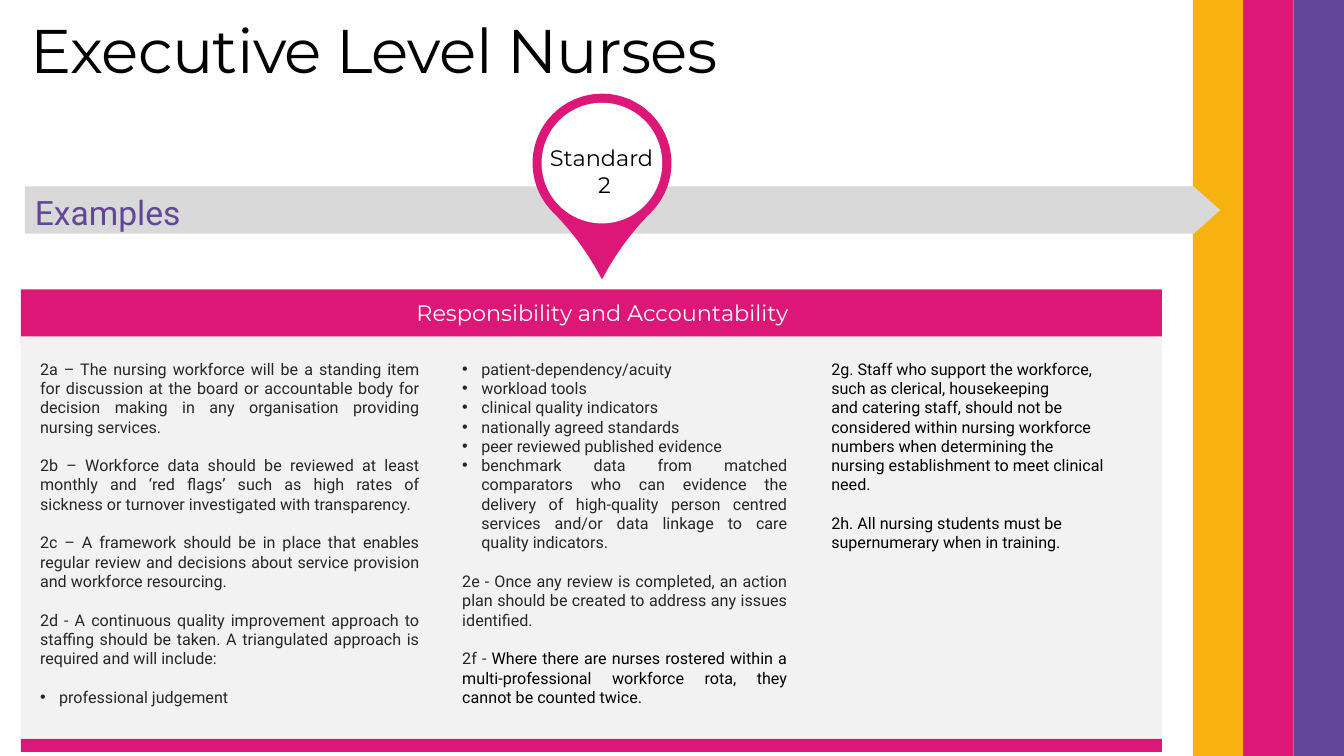
from lxml import etree
from pptx import Presentation
from pptx import util as u
from pptx.dml.color import RGBColor
from pptx.enum import shapes, text
from pptx.oxml.ns import qn

PINK, PURPLE, AMBER = "DD1778", "63469A", "F7B20F"
BAND_GREY, PANEL_GREY = "D9D9D9", "F2F2F2"
BLACK, DARK, WHITE = "000000", "262626", "FFFFFF"
HEADING_FONT, BODY_FONT = "Montserrat", "Roboto"
BODY_SIZE, LINE_GAP = 11.5, 13.8
BULLET_INDENT = 0.48
SHAPE = shapes.MSO_SHAPE
ALIGN = text.PP_ALIGN
ANCHOR = text.MSO_ANCHOR

# Each paragraph: text, then "gap" (space above) and "bullet" flags
LEFT_COLUMN = [
    ("2a – The nursing workforce will be a standing item for discussion at the board or "
     "accountable body for decision making in any organisation providing nursing services.", ""),
    ("2b – Workforce data should be reviewed at least monthly and ‘red flags’ such as high "
     "rates of sickness or turnover investigated with transparency.", "gap"),
    ("2c – A framework should be in place that enables regular review and decisions about "
     "service provision and workforce resourcing.", "gap"),
    ("2d - A continuous quality improvement approach to staffing should be taken. "
     "A triangulated approach is required and will include:", "gap"),
    ("professional judgement", "gap bullet"),
]
MIDDLE_COLUMN = [
    ("patient-dependency/acuity", "bullet"),
    ("workload tools", "bullet"),
    ("clinical quality indicators", "bullet"),
    ("nationally agreed standards", "bullet"),
    ("peer reviewed published evidence", "bullet"),
    ("benchmark data from matched comparators who can evidence the delivery of high-quality "
     "person centred services and/or data linkage to care quality indicators.", "bullet"),
    ("2e - Once any review is completed, an action plan should be created to address any "
     "issues identified.", "gap"),
    ("2f - ", "gap"),
]
ROSTER_RULE = ("Where there are nurses rostered within a multi-professional workforce rota, "
               "they cannot be counted twice.")
RIGHT_COLUMN = [
    ("2g. Staff who support the workforce,", ""),
    ("such as clerical, housekeeping", ""),
    ("and catering staff, should not be", ""),
    ("considered within nursing workforce", ""),
    ("numbers when determining the", ""),
    ("nursing establishment to meet clinical", ""),
    ("need.", ""),
    ("2h. All nursing students must be", "gap"),
    ("supernumerary when in training.", ""),
]


def colour(value):
    return RGBColor.from_string(value)


def add_block(slide, kind, left, top, width, height, fill):
    shape = slide.shapes.add_shape(kind, u.Cm(left), u.Cm(top), u.Cm(width), u.Cm(height))
    shape.shadow.inherit = False
    shape.fill.solid()
    shape.fill.fore_color.rgb = colour(fill)
    shape.line.fill.background()
    return shape


def add_run(paragraph, words, size, font, ink):
    run = paragraph.add_run()
    run.text = words
    run.font.size = u.Pt(size)
    run.font.name = font
    run.font.color.rgb = colour(ink)
    return run


def add_bullet(paragraph):
    properties = paragraph._p.get_or_add_pPr()
    properties.set("marL", str(u.Cm(BULLET_INDENT)))
    properties.set("indent", str(-u.Cm(BULLET_INDENT)))
    etree.SubElement(properties, qn("a:buFont")).set("typeface", "Arial")
    etree.SubElement(properties, qn("a:buChar")).set("char", "•")


def add_text(slide, paragraphs, left, top, width, height, size=BODY_SIZE, font=BODY_FONT,
             ink=DARK, align=ALIGN.LEFT, anchor=ANCHOR.TOP, wrap=True):
    box = slide.shapes.add_textbox(u.Cm(left), u.Cm(top), u.Cm(width), u.Cm(height))
    frame = box.text_frame
    frame.word_wrap = wrap
    frame.vertical_anchor = anchor
    for index, (words, flags) in enumerate(paragraphs):
        paragraph = frame.add_paragraph() if index else frame.paragraphs[0]
        paragraph.alignment = align
        if "gap" in flags:
            paragraph.space_before = u.Pt(LINE_GAP)
        if "bullet" in flags:
            add_bullet(paragraph)
        add_run(paragraph, words, size, font, ink)
    return frame


def add_stripes(slide, right, height):
    width = 1.27
    for index, fill in enumerate((PURPLE, PINK, AMBER), start=1):
        add_block(slide, SHAPE.RECTANGLE, right - index * width, 0, width, height, fill)


def add_title(slide, left, top, width, height):
    frame = add_text(slide, [("Executive Level Nurses", "")], left, top, width, height,
                     size=44, font=HEADING_FONT, ink=BLACK, anchor=ANCHOR.BOTTOM)
    paragraph = frame.paragraphs[0]
    paragraph.line_spacing = 0.9
    paragraph.runs[0].font._element.set("spc", "-50")


def add_examples_arrow(slide, left, top, width, height):
    arrow = add_block(slide, SHAPE.RIGHT_ARROW, left, top, width, height, BAND_GREY)
    arrow.adjustments[0] = 1
    arrow.adjustments[1] = 0.56
    add_text(slide, [("Examples", "")], left, top, 4.47, 1.27, size=24, ink=PURPLE, wrap=False)


def add_standard_pin(slide, left, top, size):
    rim = 0.23
    pin = add_block(slide, SHAPE.TEAR, left, top, size, size, PINK)
    pin.adjustments[0] = 1.184
    pin.rotation = 135
    add_block(slide, SHAPE.OVAL, left + rim, top + rim, size - 2 * rim, size - 2 * rim, WHITE)
    add_text(slide, [("Standard", ""), (" 2", "")], left + 0.15, top + 1.14, 3.18, 1.63,
             size=16, font=HEADING_FONT, ink=BLACK, align=ALIGN.CENTER,
             anchor=ANCHOR.MIDDLE, wrap=False)


def add_standard_panel(slide, left, top, width):
    # Header, body and footer bands
    body_top, footer_top = top + 1.19, top + 11.33
    add_block(slide, SHAPE.RECTANGLE, left, top, width, 1.35, PINK)
    add_block(slide, SHAPE.RECTANGLE, left, body_top, width, 10.11, PANEL_GREY)
    add_block(slide, SHAPE.RECTANGLE, left, footer_top, width, 0.33, PINK)
    add_text(slide, [("Responsibility and Accountability", "")], left + 1.32, top + 0.13,
             26.67, 0.94, size=16, font=HEADING_FONT, ink=WHITE, align=ALIGN.CENTER)

    # Three columns of requirements
    columns = [
        (LEFT_COLUMN, 0.23, 10.06, DARK, ALIGN.JUSTIFY),
        (MIDDLE_COLUMN, 10.87, 8.69, DARK, ALIGN.JUSTIFY),
        (RIGHT_COLUMN, 20.17, 8.59, BLACK, ALIGN.LEFT),
    ]
    frames = [add_text(slide, paragraphs, left + offset, body_top + 0.44, column_width, 9.6,
                       ink=ink, align=align)
              for paragraphs, offset, column_width, ink, align in columns]
    add_run(frames[1].paragraphs[-1], ROSTER_RULE, BODY_SIZE, BODY_FONT, BLACK)


def main():
    presentation = Presentation()
    presentation.slide_width = u.Cm(33.87)
    presentation.slide_height = u.Cm(19.05)
    slide = presentation.slides.add_slide(presentation.slide_layouts[6])
    add_stripes(slide, right=33.87, height=19.05)
    add_title(slide, 0.53, 0.05, 26.92, 2.26)
    add_examples_arrow(slide, 0.63, 4.7, 30.12, 1.19)
    add_standard_pin(slide, 13.42, 2.36, 3.5)
    add_standard_panel(slide, 0.53, 7.29, 28.75)
    presentation.save("out.pptx")


if __name__ == "__main__":
    main()
